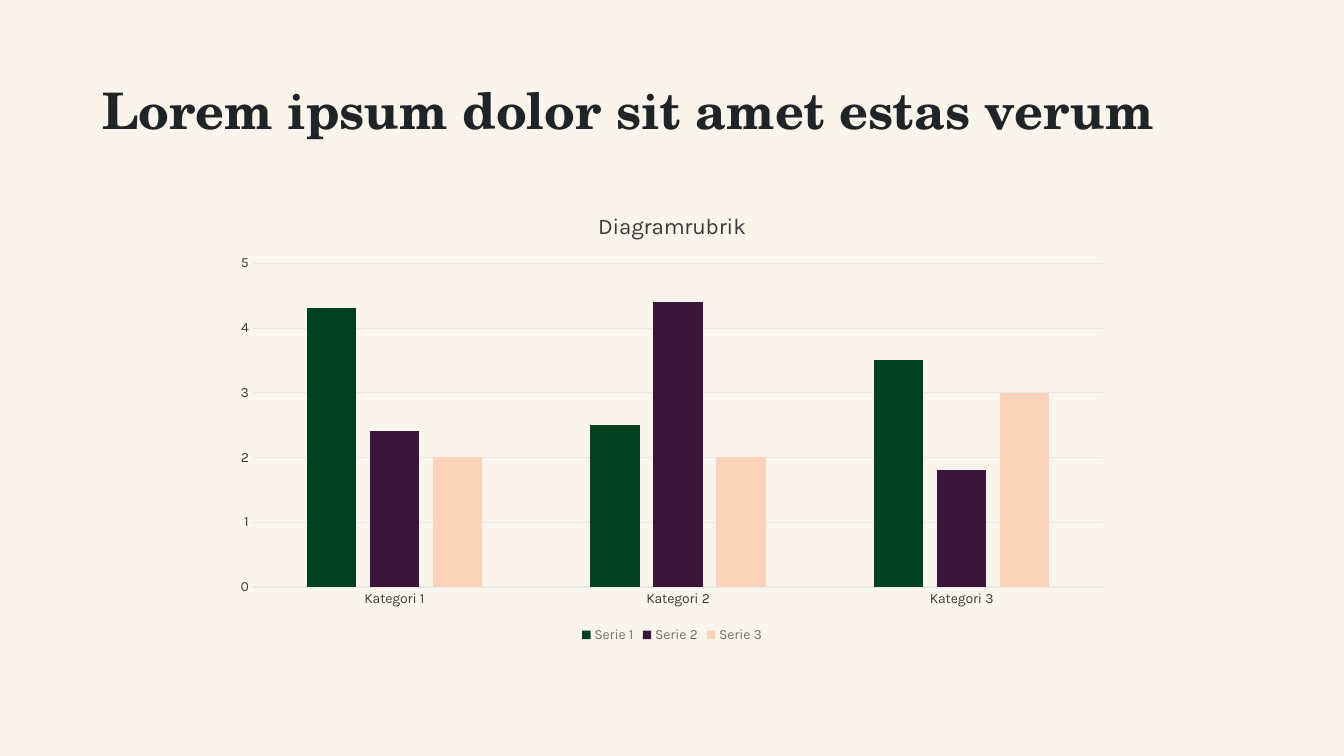
import pptx
import pptx.chart.data
import pptx.dml.color
import pptx.enum.chart
import pptx.enum.text
import pptx.util

Pt = pptx.util.Pt
HEADING_FONT = "TeX Gyre Schola"
BODY_FONT = "Karla"
INK = "202427"
GRID = "E8E8E8"
CATEGORIES = ["Kategori 1", "Kategori 2", "Kategori 3"]
SERIES = [
    ("Serie 1", (4.3, 2.5, 3.5), "004020"),
    ("Serie 2", (2.4, 4.4, 1.8), "3C153B"),
    ("Serie 3", (2, 2, 3), "FAD3BA"),
]


def paint(color_format, hex_color):
    color_format.rgb = pptx.dml.color.RGBColor.from_string(hex_color)


def fill_solid(fill, hex_color):
    fill.solid()
    paint(fill.fore_color, hex_color)


def style_font(font, name, size, hex_color, bold=False):
    font.name = name
    font.size = Pt(size)
    font.bold = bold
    paint(font.color, hex_color)


def style_line(line, hex_color, width):
    fill_solid(line.fill, hex_color)
    line.width = Pt(width)


def add_heading(page, left, top, width, height):
    box = page.shapes.add_textbox(Pt(left), Pt(top), Pt(width), Pt(height))
    frame = box.text_frame
    frame.word_wrap = True
    frame.vertical_anchor = pptx.enum.text.MSO_ANCHOR.MIDDLE
    para = frame.paragraphs[0]
    para.text = "Lorem ipsum dolor sit amet estas verum"
    para.line_spacing = 0.9
    style_font(para.font, HEADING_FONT, 36, INK, bold=True)


def style_axes(chart):
    for axis in (chart.category_axis, chart.value_axis):
        axis.major_tick_mark = pptx.enum.chart.XL_TICK_MARK.NONE
        axis.minor_tick_mark = pptx.enum.chart.XL_TICK_MARK.NONE
        style_font(axis.tick_labels.font, BODY_FONT, 10, "3B3B3B")
    style_line(chart.category_axis.format.line, GRID, 0.75)
    values = chart.value_axis
    values.format.line.fill.background()
    values.minimum_scale, values.maximum_scale, values.major_unit = 0, 5, 1
    values.has_major_gridlines = True
    style_line(values.major_gridlines.format.line, GRID, 0.5)


def add_column_chart(page, left, top, width, height):
    data = pptx.chart.data.CategoryChartData()
    data.categories = CATEGORIES
    for name, values, _ in SERIES:
        data.add_series(name, values)
    chart = page.shapes.add_chart(
        pptx.enum.chart.XL_CHART_TYPE.COLUMN_CLUSTERED,
        Pt(left), Pt(top), Pt(width), Pt(height), data).chart
    style_font(chart.font, BODY_FONT, 10, INK)

    chart.has_title = True
    title = chart.chart_title
    title.include_in_layout = False
    para = title.text_frame.paragraphs[0]
    para.text = "Diagramrubrik"
    style_font(para.font, BODY_FONT, 16, "3A3A3A")

    chart.has_legend = True
    chart.legend.position = pptx.enum.chart.XL_LEGEND_POSITION.BOTTOM
    chart.legend.include_in_layout = False
    style_font(chart.legend.font, BODY_FONT, 10, "747474")

    style_axes(chart)
    plot = chart.plots[0]
    plot.gap_width = 219
    plot.overlap = -27
    plot.vary_by_categories = False
    for series, (_, _, hex_color) in zip(plot.series, SERIES):
        fill_solid(series.format.fill, hex_color)


def main():
    deck = pptx.Presentation()
    deck.slide_width, deck.slide_height = Pt(960), Pt(540)
    page = deck.slides.add_slide(deck.slide_layouts[6])
    fill_solid(page.background.fill, "F9F5ED")
    add_heading(page, 66, 28.8, 828, 104.4)
    add_column_chart(page, 159, 138, 642, 324)
    deck.save("out.pptx")


if __name__ == "__main__":
    main()
